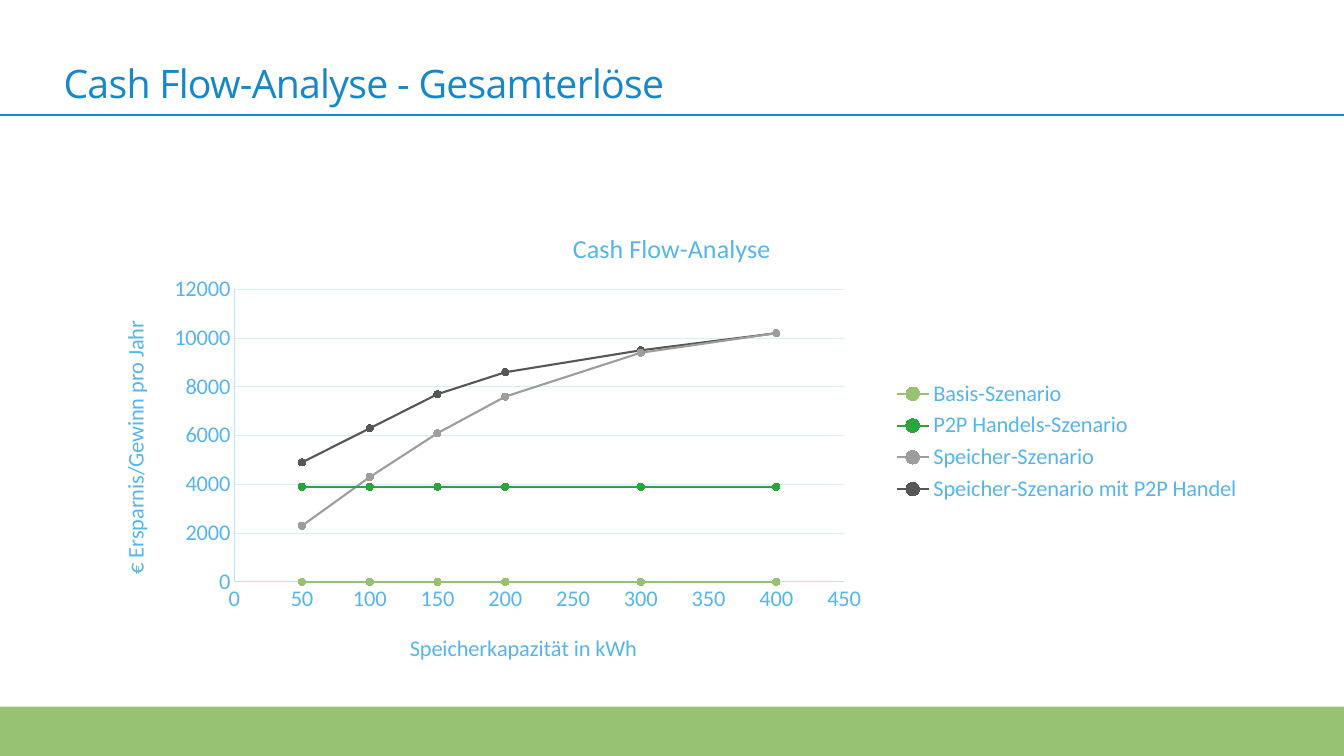
from pptx import Presentation
from pptx.chart.data import XyChartData
from pptx.dml.color import RGBColor
from pptx.enum.chart import XL_CHART_TYPE as Kind, XL_LEGEND_POSITION as Side
from pptx.enum.chart import XL_MARKER_STYLE as Mark, XL_TICK_MARK as Tick
from pptx.enum.shapes import MSO_CONNECTOR as Link, MSO_SHAPE as Form
from pptx.enum.text import MSO_ANCHOR as Anchor, MSO_AUTO_SIZE as Fit, PP_ALIGN as Align
from pptx.oxml.ns import qn
from pptx.oxml.xmlchemy import OxmlElement
from pptx.util import Inches, Pt

BLUE = RGBColor(0x14, 0x88, 0xCB)
SKY = RGBColor(0x55, 0xB6, 0xEE)
AXIS = RGBColor(0xBE, 0xE3, 0xF9)
GRID = RGBColor(0xD8, 0xEE, 0xFB)
LIME = RGBColor(0x96, 0xC2, 0x71)
GREEN = RGBColor(0x28, 0xA6, 0x39)
GREY = RGBColor(0x9D, 0x9D, 0x9C)
DARK = RGBColor(0x57, 0x57, 0x56)

WIDTH, HEIGHT = 13.33, 7.5
SIZES = (50, 100, 150, 200, 300, 400)
SERIES = (
    ("Basis-Szenario", LIME, [0] * 6),
    ("P2P Handels-Szenario", GREEN, [3900] * 6),
    ("Speicher-Szenario", GREY, (2300, 4300, 6100, 7600, 9400, 10200)),
    ("Speicher-Szenario mit P2P Handel", DARK, (4900, 6300, 7700, 8600, 9500, 10200)),
)


def style(font, size, color, name="Calibri"):
    font.name, font.size, font.bold = name, Pt(size), False
    font.color.rgb = color


def place(node, **spots):
    """Fix a chart part at fractions of the chart's size."""
    old = node.find(qn("c:layout"))
    if old is not None:
        node.remove(old)
    layout = OxmlElement("c:layout")
    manual = OxmlElement("c:manualLayout")
    layout.append(manual)
    tags = {"xMode": "edge", "yMode": "edge", **spots}
    if "w" in spots:
        tags = {"layoutTarget": "inner", **tags}
    for tag, val in tags.items():
        item = OxmlElement("c:" + tag)
        item.set("val", str(val))
        manual.append(item)
    node.insert(0 if node.find(qn("c:tx")) is None else 1, layout)


def label(title, text, size, x, y):
    para = title.text_frame.paragraphs[0]
    para.text = text
    style(para.font, size, SKY)
    place(title.element, x=x, y=y)


def add_head(slide, left, top, width, height):
    title = slide.shapes.title
    title.left, title.top = Inches(left), Inches(top)
    title.width, title.height = Inches(width), Inches(height)
    frame = title.text_frame
    frame.auto_size, frame.word_wrap = Fit.NONE, True
    frame.vertical_anchor = Anchor.BOTTOM
    frame.margin_bottom = 0
    para = frame.paragraphs[0]
    para.text = "Cash Flow-Analyse - Gesamterlöse"
    para.alignment = Align.LEFT
    style(para.font, 28, BLUE, "Open Sans")
    para.runs[0].font._element.set("spc", "-50")

    base = Inches(top + height + 0.08)
    rule = slide.shapes.add_connector(Link.STRAIGHT, 0, base, Inches(WIDTH), base)
    rule.line.color.rgb, rule.line.width = BLUE, Pt(1)
    rule._element.spPr.append(OxmlElement("a:effectLst"))


def add_foot(slide, top, height):
    band = slide.shapes.add_shape(
        Form.RECTANGLE, 0, Inches(top), Inches(WIDTH), Inches(height))
    band.shadow.inherit = False
    band.fill.solid()
    band.fill.fore_color.rgb = LIME
    band.line.fill.background()


def set_axis(axis, top, step, text, x, y):
    axis.minimum_scale, axis.maximum_scale, axis.major_unit = 0, top, step
    axis.major_tick_mark = axis.minor_tick_mark = Tick.NONE
    style(axis.tick_labels.font, 16, SKY)
    axis.tick_labels.number_format = "0"
    axis.tick_labels.number_format_is_linked = False
    axis.format.line.color.rgb, axis.format.line.width = AXIS, Pt(0.75)
    label(axis.axis_title, text, 16, x, y)


def add_plot(slide, left, top, width, height):
    data = XyChartData()
    for name, _, values in SERIES:
        row = data.add_series(name)
        for pair in zip(SIZES, values):
            row.add_data_point(*pair)
    chart = slide.shapes.add_chart(
        Kind.XY_SCATTER_SMOOTH, Inches(left), Inches(top),
        Inches(width), Inches(height), data).chart
    style(chart.font, 16, BLUE)
    chart.has_title = True
    label(chart.chart_title, "Cash Flow-Analyse", 18.6, 0.41, 0.05)

    across, up = chart.category_axis, chart.value_axis
    set_axis(across, 450, 50, "Speicherkapazität in kWh", 0.27, 0.89)
    set_axis(up, 12000, 2000, "€ Ersparnis/Gewinn pro Jahr", 0.02, 0.24)
    across.has_major_gridlines = False
    up.has_major_gridlines = True
    grid = up.major_gridlines.format.line
    grid.color.rgb, grid.width = GRID, Pt(0.75)
    body = up.axis_title.element.find(".//" + qn("a:bodyPr"))
    body.set("rot", "-5400000")
    body.set("vert", "horz")

    chart.has_legend = True
    chart.legend.position = Side.RIGHT
    chart.legend.include_in_layout = False
    style(chart.legend.font, 16, SKY)
    place(chart.element.find(".//" + qn("c:plotArea")),
          x=0.122, y=0.183, w=0.526, h=0.61)

    plot = chart.plots[0]
    plot.vary_by_categories = False
    for row, (_, color, _) in zip(plot.series, SERIES):
        row.smooth = True
        row.format.line.color.rgb, row.format.line.width = color, Pt(1.5)
        row.marker.style, row.marker.size = Mark.CIRCLE, 5
        look = row.marker.format
        look.fill.solid()
        look.fill.fore_color.rgb = look.line.color.rgb = color


def main():
    deck = Presentation()
    deck.slide_width, deck.slide_height = Inches(WIDTH), Inches(HEIGHT)
    slide = deck.slides.add_slide(deck.slide_layouts[5])
    add_foot(slide, 7.01, HEIGHT - 7.01)
    add_head(slide, 0.53, 0.04, 10.36, 1.02)
    add_plot(slide, 0.92, 2, 11.5, 4.76)
    deck.save("out.pptx")


if __name__ == "__main__":
    main()
